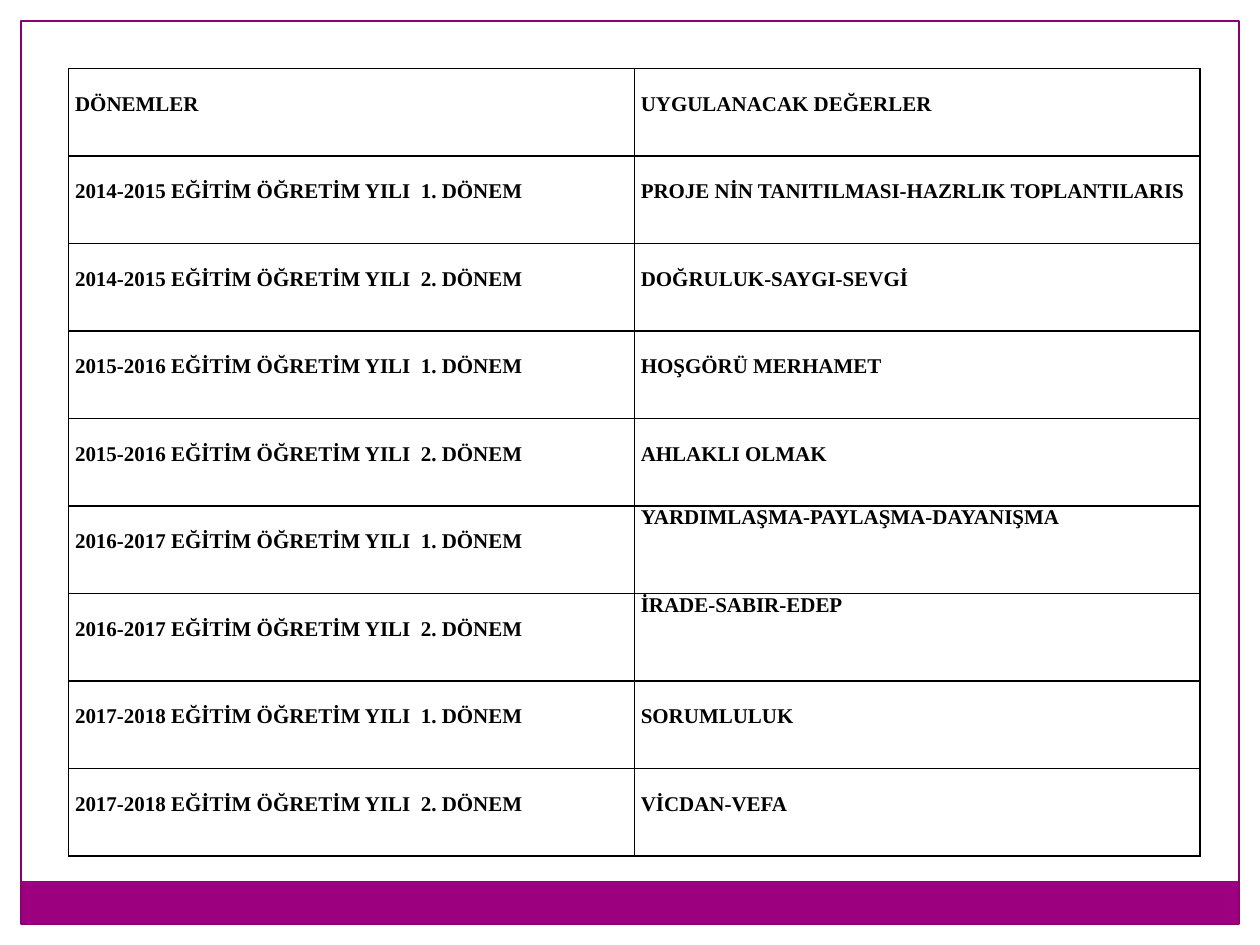
from lxml.etree import SubElement
from pptx import Presentation
from pptx.dml.color import RGBColor
from pptx.enum.shapes import MSO_SHAPE
from pptx.oxml.ns import qn
from pptx.util import Inches, Pt

COLORS = {"margin": "FFFFFF", "band": "9C007F", "frame": "8A0070", "ink": "000000"}
FONT = "Times New Roman"
PAGE_WIDTH, PAGE_HEIGHT = 10, 7.5
INSET = 1 / 6
FRAME_WIDTH, FRAME_HEIGHT = PAGE_WIDTH - 2 * INSET, PAGE_HEIGHT - 2 * INSET
BAND_HEIGHT = 0.34
FILLED_AREAS = (
    ("margin", 0, 0, PAGE_WIDTH, INSET),
    ("margin", PAGE_WIDTH - INSET, 0, INSET, PAGE_HEIGHT),
    ("margin", 0, 0, INSET, PAGE_HEIGHT),
    ("band", INSET, PAGE_HEIGHT - INSET - BAND_HEIGHT, FRAME_WIDTH, BAND_HEIGHT),
)
HEADER = ("DÖNEMLER", "UYGULANACAK DEĞERLER")
YEARS = ("2014-2015", "2015-2016", "2016-2017", "2017-2018")
VALUES = (
    "PROJE NİN TANITILMASI-HAZRLIK TOPLANTILARIS",
    "DOĞRULUK-SAYGI-SEVGİ",
    "HOŞGÖRÜ MERHAMET",
    "AHLAKLI OLMAK",
    "YARDIMLAŞMA-PAYLAŞMA-DAYANIŞMA",
    "İRADE-SABIR-EDEP",
    "SORUMLULUK",
    "VİCDAN-VEFA",
)
TOP_ALIGNED = {"YARDIMLAŞMA-PAYLAŞMA-DAYANIŞMA", "İRADE-SABIR-EDEP"}
TERMS = [f"{year} EĞİTİM ÖĞRETİM YILI  {term}. DÖNEM" for year in YEARS for term in (1, 2)]
ROWS = [HEADER, *zip(TERMS, VALUES)]


def color(name):
    return RGBColor.from_string(COLORS[name])


def add_rectangle(page, left, top, width, height):
    box = page.shapes.add_shape(
        MSO_SHAPE.RECTANGLE, Inches(left), Inches(top), Inches(width), Inches(height)
    )
    box.shadow.inherit = False
    return box


def add_borders(cell):
    properties = cell._tc.get_or_add_tcPr()
    for position, side in enumerate(("a:lnL", "a:lnR", "a:lnT", "a:lnB")):
        line = properties.makeelement(qn(side), {"w": str(Pt(1))})
        properties.insert(position, line)
        fill = SubElement(line, qn("a:solidFill"))
        SubElement(fill, qn("a:srgbClr"), val=COLORS["ink"])


def write_cell(cell, text):
    cell.fill.background()
    cell.margin_left = cell.margin_right = Inches(0.05)
    cell.margin_top = Inches(0 if text in TOP_ALIGNED else 0.19)
    cell.margin_bottom = 0
    span = cell.text_frame.paragraphs[0].add_run()
    span.text = text
    span.font.name = FONT
    span.font.size = Pt(12)
    span.font.bold = True
    span.font.color.rgb = color("ink")
    add_borders(cell)


def add_values_table(page):
    left = top = Pt(39.3)
    width, height = Inches(8.98), Inches(6.25)
    table = page.shapes.add_table(len(ROWS), len(HEADER), left, top, width, height).table
    table.first_row = table.horz_banding = False
    for column in table.columns:
        column.width = width // len(HEADER)
    for row, texts in zip(table.rows, ROWS):
        row.height = height // len(ROWS)
        for cell, text in zip(row.cells, texts):
            write_cell(cell, text)


def main():
    deck = Presentation()
    deck.slide_width, deck.slide_height = Inches(PAGE_WIDTH), Inches(PAGE_HEIGHT)
    page = deck.slides.add_slide(deck.slide_layouts[6])

    for name, *area in FILLED_AREAS:
        box = add_rectangle(page, *area)
        box.fill.solid()
        box.fill.fore_color.rgb = color(name)
        box.line.fill.background()

    frame = add_rectangle(page, INSET, INSET, FRAME_WIDTH, FRAME_HEIGHT)
    frame.fill.background()
    frame.line.color.rgb = color("frame")
    frame.line.width = Pt(0.75)

    add_values_table(page)
    deck.save("out.pptx")


if __name__ == "__main__":
    main()
